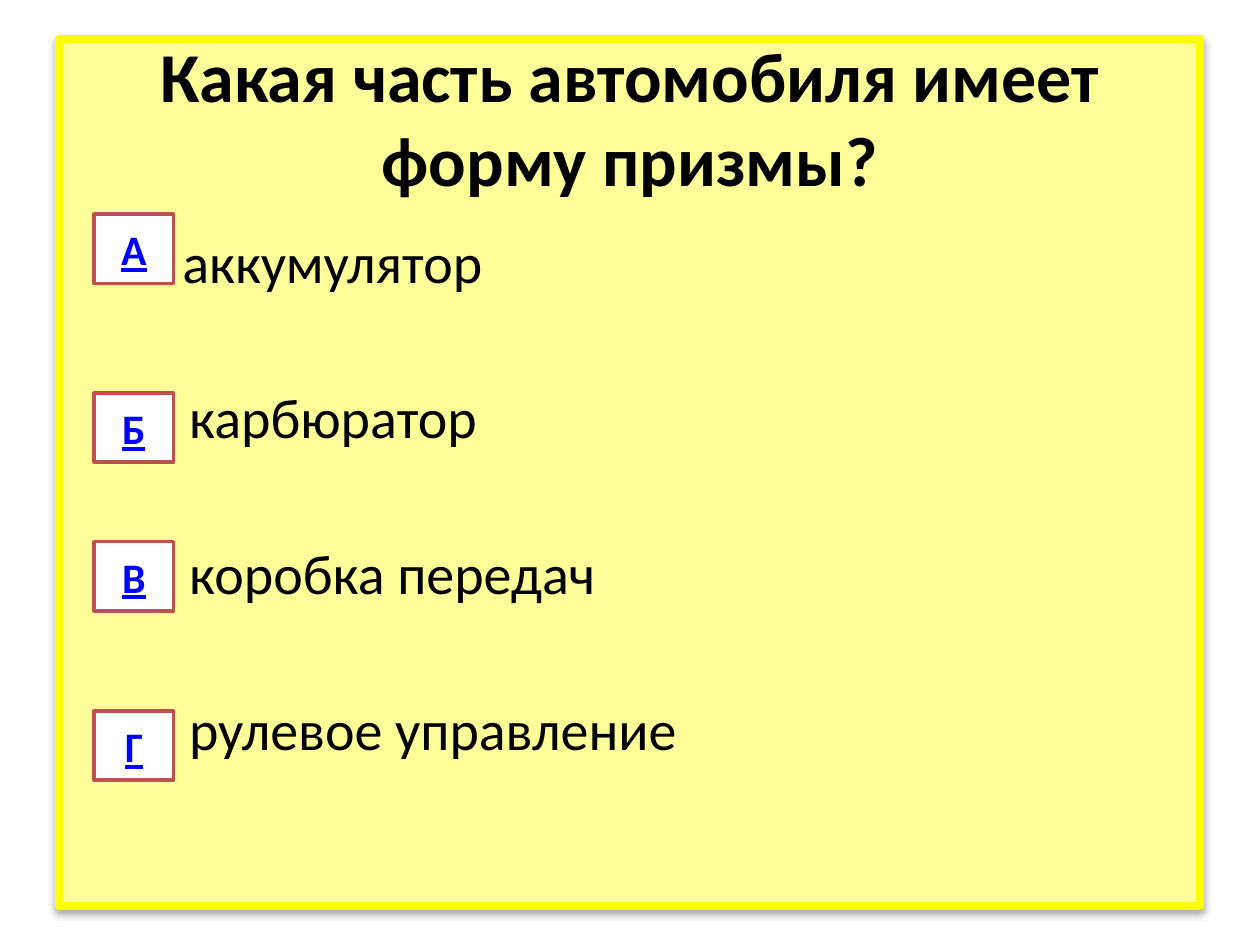
from lxml.etree import SubElement
from pptx import Presentation
from pptx.dml.color import RGBColor as Rgb
from pptx.enum.shapes import MSO_SHAPE as Shape
from pptx.enum.text import MSO_ANCHOR as Anchor, MSO_AUTO_SIZE as AutoSize, PP_ALIGN as Align
from pptx.oxml.ns import qn
from pptx.util import Cm, Pt

COLORS = {
    "frame_fill": "FFFF99",
    "frame_line": "FFFF00",
    "text": "000000",
    "shadow": "000000",
    "key_fill": "FFFFFF",
    "key_line": "C0504D",
    "key_text": "0000FF",
}
ANSWERS = [
    ("А", "аккумулятор", 4.32, 2.15),
    ("Б", "карбюратор", 7.92, 2.29),
    ("В", "коробка передач", 10.92, 2.29),
    ("Г", "рулевое управление", 14.33, 2.29),
]


class QuizSlide:
    font_name = "Calibri"

    def __init__(self, deck):
        self.page = deck.slides.add_slide(deck.slide_layouts[1])

    def place(self, box, left, top, width, height):
        box.left, box.top, box.width, box.height = map(Cm, (left, top, width, height))

    def add_text(self, para, text, size, color, bold=False, underline=False):
        span = para.add_run()
        span.text = text
        font = span.font
        font.name, font.size = self.font_name, Pt(size)
        font.bold, font.underline = bold, underline
        font.color.rgb = Rgb.from_string(COLORS[color])

    def rectangle(self, left, top, width, height, fill, line, line_width):
        box = self.page.shapes.add_shape(
            Shape.RECTANGLE, Cm(left), Cm(top), Cm(width), Cm(height))
        box.shadow.inherit = False
        box.fill.solid()
        box.fill.fore_color.rgb = Rgb.from_string(COLORS[fill])
        box.line.color.rgb = Rgb.from_string(COLORS[line])
        box.line.width = Pt(line_width)
        return box

    def frame(self):
        box = self.rectangle(1.19, 0.79, 23.01, 17.48, "frame_fill", "frame_line", 4.5)
        effects = box._element.spPr.find(qn("a:effectLst"))
        shadow = SubElement(effects, qn("a:outerShdw"), blurRad=str(Pt(3.5)),
                            dist=str(Pt(2.2)), dir="5400000", rotWithShape="0")
        tint = SubElement(shadow, qn("a:srgbClr"), val=COLORS["shadow"])
        SubElement(tint, qn("a:alpha"), val="32000")
        self.page.shapes._spTree.insert(2, box._element)

    def title(self, text):
        box = self.page.shapes.title
        self.place(box, 1.27, 0.76, 22.86, 3.18)
        box.text_frame.vertical_anchor = Anchor.MIDDLE
        para = box.text_frame.paragraphs[0]
        para.alignment = Align.CENTER
        self.add_text(para, text, 40, "text", bold=True)

    def answers(self, answers):
        box = self.page.placeholders[1]
        self.place(box, 1.27, 4.45, 22.86, 12.57)
        frame = box.text_frame
        frame.auto_size = AutoSize.NONE
        for index, (_, text, _, indent) in enumerate(answers):
            para = frame.add_paragraph() if index else frame.paragraphs[0]
            props = para._p.get_or_add_pPr()
            props.set("marL", str(Cm(indent)))
            props.set("indent", "0")
            SubElement(props, qn("a:buNone"))
            para.space_before = Pt(50.6 if index else 0)
            self.add_text(para, text, 32, "text")

    def key(self, letter, top):
        box = self.rectangle(1.9, top, 1.6, 1.4, "key_fill", "key_line", 2)
        frame = box.text_frame
        frame.word_wrap = False
        frame.vertical_anchor = Anchor.MIDDLE
        para = frame.paragraphs[0]
        para.alignment = Align.CENTER
        self.add_text(para, letter, 24, "key_text", bold=True, underline=True)


def main():
    deck = Presentation()
    deck.slide_width, deck.slide_height = Cm(25.4), Cm(19.05)
    slide = QuizSlide(deck)
    slide.frame()
    slide.title("Какая часть автомобиля имеет форму призмы?")
    slide.answers(ANSWERS)
    for letter, _, top, _ in ANSWERS:
        slide.key(letter, top)
    deck.save("out.pptx")


if __name__ == "__main__":
    main()
